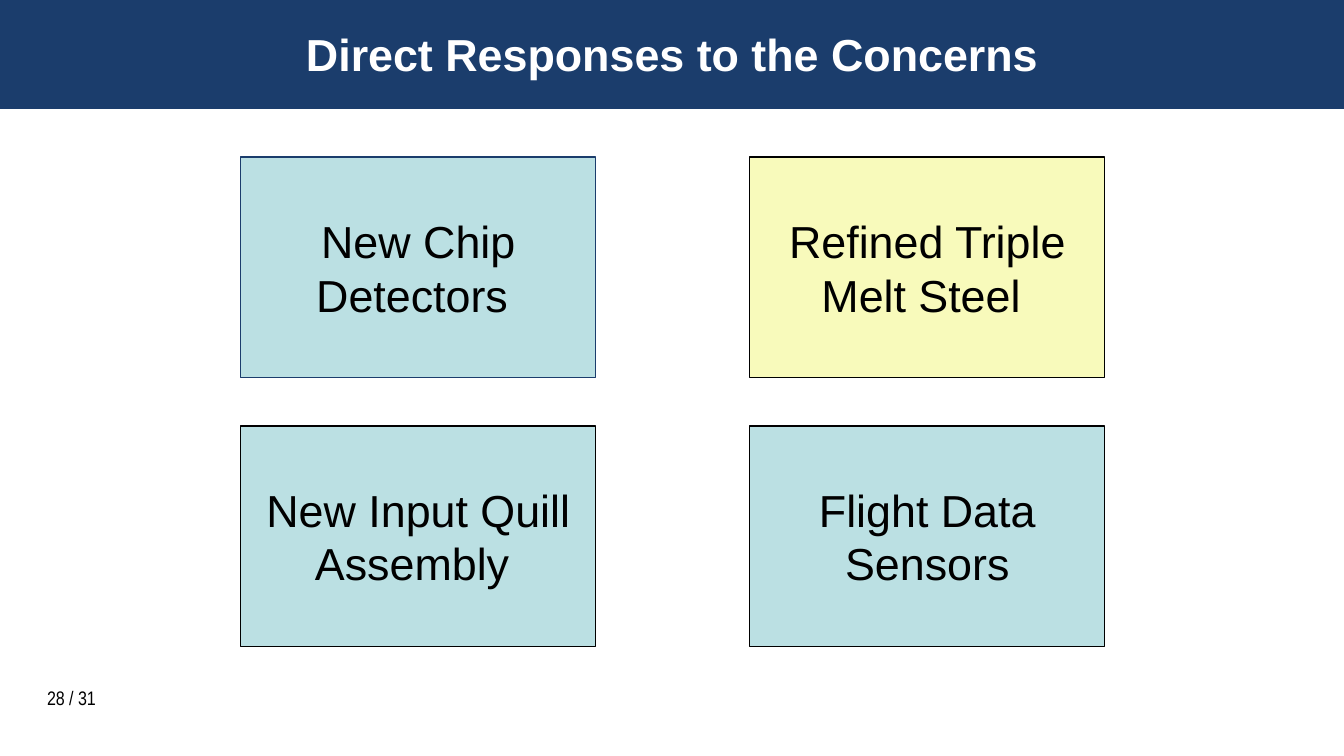
import pptx
import pptx.dml.color
import pptx.enum.shapes
import pptx.enum.text
import pptx.util
from pptx.dml.color import RGBColor
from pptx.util import Cm

NAVY = RGBColor(0x1B, 0x3D, 0x6C)
AQUA = RGBColor(0xBB, 0xE0, 0xE3)
YELLOW = RGBColor(0xF8, 0xFA, 0xBB)
BLACK = RGBColor(0, 0, 0)
WHITE = RGBColor(0xFF, 0xFF, 0xFF)

SLIDE_WIDTH, SLIDE_HEIGHT = 25.4, 14.29
CARD_WIDTH, CARD_HEIGHT = 6.71, 4.17
CARD_LEFT, CARD_TOP = 4.55, 2.97
COLUMN_STEP, ROW_STEP = 9.62, 5.08

# Text, fill and outline, row by row
CARDS = [
    [("New Chip Detectors ", AQUA, NAVY),
     ("Refined Triple Melt Steel ", YELLOW, BLACK)],
    [("New Input Quill Assembly ", AQUA, BLACK),
     ("Flight Data Sensors", AQUA, BLACK)],
]


def write_text(shape, text, size, color, font_name="Arial", bold=False, centered=True):
    text_frame = shape.text_frame
    text_frame.word_wrap = True
    text_frame.text = text
    paragraph = text_frame.paragraphs[0]
    if centered:
        paragraph.alignment = pptx.enum.text.PP_ALIGN.CENTER
        text_frame.vertical_anchor = pptx.enum.text.MSO_ANCHOR.MIDDLE
    font = paragraph.runs[0].font
    font.name = font_name
    font.size = pptx.util.Pt(size)
    font.bold = bold
    font.color.rgb = color


def add_rectangle(slide, left, top, width, height, fill, outline=None):
    shape = slide.shapes.add_shape(
        pptx.enum.shapes.MSO_SHAPE.RECTANGLE,
        Cm(left), Cm(top), Cm(width), Cm(height))
    shape.shadow.inherit = False
    shape.fill.solid()
    shape.fill.fore_color.rgb = fill
    if outline is None:
        shape.line.fill.background()
    else:
        shape.line.color.rgb = outline
        shape.line.width = pptx.util.Pt(0.75)
    return shape


def add_title(slide, text):
    add_rectangle(slide, 0, 0, SLIDE_WIDTH, 2.06, NAVY)
    title = slide.shapes.add_textbox(0, Cm(0.3), Cm(SLIDE_WIDTH), Cm(1.42))
    text_frame = title.text_frame
    text_frame.margin_left = text_frame.margin_right = Cm(0.18)
    text_frame.margin_top = text_frame.margin_bottom = Cm(0.1)
    write_text(title, text, 24, WHITE, bold=True)


def add_page_number(slide, text):
    page_number = slide.shapes.add_textbox(Cm(0.64), Cm(12.85), Cm(2.54), Cm(0.33))
    write_text(page_number, text, 10.5, BLACK, "Arial Narrow", centered=False)


def add_cards(slide):
    for row, cards in enumerate(CARDS):
        for column, (text, fill, outline) in enumerate(cards):
            card = add_rectangle(
                slide, CARD_LEFT + column * COLUMN_STEP, CARD_TOP + row * ROW_STEP,
                CARD_WIDTH, CARD_HEIGHT, fill, outline)
            write_text(card, text, 24, BLACK)


def main():
    presentation = pptx.Presentation()
    presentation.slide_width = Cm(SLIDE_WIDTH)
    presentation.slide_height = Cm(SLIDE_HEIGHT)
    slide = presentation.slides.add_slide(presentation.slide_layouts[6])
    add_title(slide, "Direct Responses to the Concerns")
    add_cards(slide)
    add_page_number(slide, "28 / 31")
    presentation.save("out.pptx")


if __name__ == "__main__":
    main()
